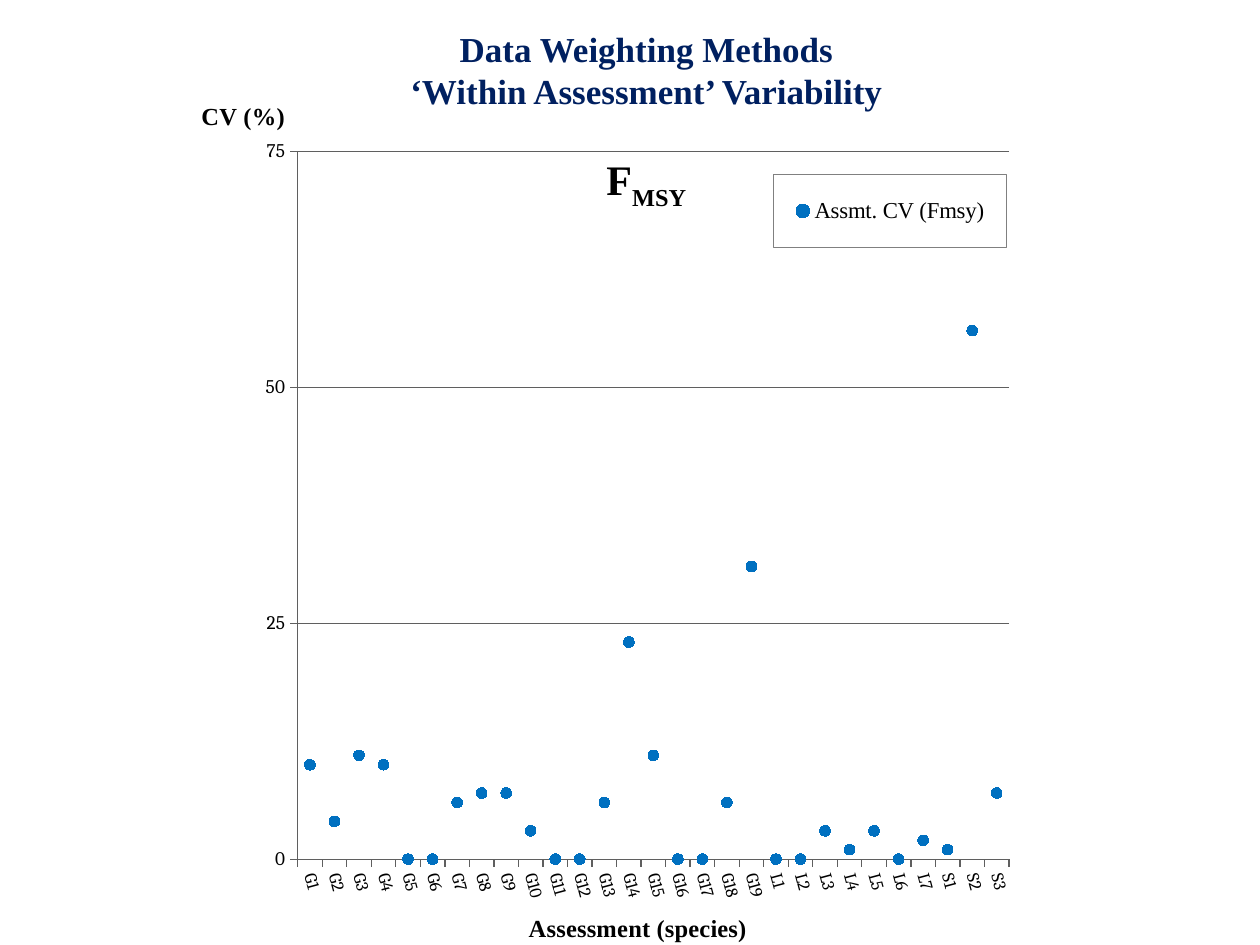
from lxml import etree
from pptx import Presentation
from pptx import util as u
from pptx.chart.data import CategoryChartData
from pptx.dml.color import RGBColor
from pptx.enum import chart as ch, text
from pptx.oxml import parse_xml
from pptx.oxml.ns import nsdecls, qn

SPECIES = [f"{group}{n}" for group, count in (("G", 19), ("L", 7), ("S", 3))
           for n in range(1, count + 1)]
CV = [10, 4, 11, 10, 0, 0, 6, 7, 7, 3, 0, 0, 6, 23, 11, 0, 0, 6, 31,
      0, 0, 3, 1, 3, 0, 2, 1, 56, 7]


def color(hex_value):
    return RGBColor.from_string(hex_value)


def set_layout(element, x, y, w=None, h=None, inner=False):
    """Place a chart part by shares of the chart's size."""
    for old in element.findall(qn("c:layout")):
        element.remove(old)
    layout = parse_xml(f"<c:layout {nsdecls('c')}><c:manualLayout/></c:layout>")
    values = {"layoutTarget": "inner" if inner else None,
              "xMode": "edge", "yMode": "edge", "x": x, "y": y, "w": w, "h": h}
    for tag, value in values.items():
        if value is not None:
            etree.SubElement(layout[0], qn(f"c:{tag}")).set("val", str(value))
    overlay = element.find(qn("c:overlay"))
    if overlay is None:
        element.insert(0, layout)
    else:
        overlay.addprevious(layout)


def shape_format(line=None):
    outline = (f'<a:ln w="9525"><a:solidFill><a:srgbClr val="{line}"/></a:solidFill></a:ln>'
               if line else "<a:ln><a:noFill/></a:ln>")
    return parse_xml(f"<c:spPr {nsdecls('c', 'a')}><a:noFill/>{outline}</c:spPr>")


class Deck:
    SERIF, LABELS = "Times New Roman", "Cambria"
    NAVY, BLACK, BLUE, GRAY = "002060", "000000", "0070C0", "5F5F5F"

    def __init__(self):
        self.prs = Presentation()
        self.prs.slide_width, self.prs.slide_height = u.Inches(10), u.Inches(7.5)
        self.slide = self.prs.slides.add_slide(self.prs.slide_layouts[5])

    def box(self, x, y, w, h):
        width, height = self.prs.slide_width, self.prs.slide_height
        return [int(v) for v in (x * width, y * height, w * width, h * height)]

    def style(self, font, size, hex_value, bold=False, name=SERIF):
        for key, value in {"name": name, "size": u.Pt(size), "bold": bold}.items():
            setattr(font, key, value)
        font.color.rgb = color(hex_value)

    def title(self, lines, symbol, subscript, *area):
        heading = self.slide.shapes.title
        for key, value in zip(("left", "top", "width", "height"), self.box(*area)):
            setattr(heading, key, value)
        frame = heading.text_frame
        frame.auto_size = text.MSO_AUTO_SIZE.NONE
        frame.vertical_anchor = text.MSO_ANCHOR.MIDDLE
        frame.text = "\n".join([*lines, symbol])
        for paragraph in frame.paragraphs:
            paragraph.alignment = text.PP_ALIGN.CENTER
            paragraph.space_before = u.Pt(0)
            self.style(paragraph.runs[0].font, 20, self.NAVY, True)
        measure = frame.paragraphs[-1]
        measure.space_before = u.Pt(24)
        sub = measure.add_run()
        sub.text = subscript
        for run in measure.runs:
            self.style(run.font, 24, self.BLACK, True)
        sub.font._element.set("baseline", "-25000")

    def axis(self, axis, caption, x, y, size):
        axis.major_tick_mark = ch.XL_TICK_MARK.OUTSIDE
        axis.minor_tick_mark = ch.XL_TICK_MARK.NONE
        axis.format.line.color.rgb = color(self.GRAY)
        axis.format.line.width = u.Pt(0.75)
        self.style(axis.tick_labels.font, size, self.BLACK, name=self.LABELS)
        frame = axis.axis_title.text_frame
        frame.text = caption
        self.style(frame.paragraphs[0].runs[0].font, 14, self.BLACK, True)
        frame._txBody.bodyPr.set("rot", "0")
        set_layout(axis.axis_title._element, x, y)

    def dot_chart(self, name, categories, values, *area):
        data = CategoryChartData(number_format="0")
        data.categories = categories
        data.add_series(name, values)
        chart = self.slide.shapes.add_chart(
            ch.XL_CHART_TYPE.LINE_MARKERS, *self.box(*area), data).chart
        chart.has_title = False
        self.style(chart.font, 10, self.BLACK, name=self.LABELS)

        # Clear backgrounds keep the heading visible
        space = chart._chartSpace
        space.find(qn("c:chart")).addnext(shape_format())
        plot_area = space.find(".//" + qn("c:plotArea"))
        plot_area.append(shape_format())
        set_layout(plot_area, 0.146, 0.105, 0.741, 0.794, inner=True)

        # Dots without a joining line
        dots = chart.plots[0].series[0]
        dots.smooth = False
        dots.format.line.fill.background()
        dots.marker.style, dots.marker.size = ch.XL_MARKER_STYLE.CIRCLE, 6
        for part in (dots.marker.format.fill, dots.marker.format.line.fill):
            part.solid()
            part.fore_color.rgb = color(self.BLUE)
        chart.plots[0].vary_by_categories = False

        # Axes
        species, cv = chart.category_axis, chart.value_axis
        self.axis(species, "Assessment (species)", 0.382, 0.953, 10)
        self.axis(cv, "CV (%)", 0.041, 0.043, 11)
        for key, value in {"minimum_scale": 0, "maximum_scale": 75, "major_unit": 25,
                           "has_major_gridlines": True}.items():
            setattr(cv, key, value)
        cv.major_gridlines.format.line.color.rgb = color(self.GRAY)
        cv.major_gridlines.format.line.width = u.Pt(0.75)
        cv.tick_labels.number_format = "0"
        cv.tick_labels.number_format_is_linked = False
        labels = species._element.find(qn("c:txPr"))
        labels.find(qn("a:bodyPr")).set("rot", "4500000")
        species._element.find(qn("c:noMultiLvlLbl")).addprevious(
            parse_xml(f'<c:tickLblSkip {nsdecls("c")} val="1"/>'))

        # Legend
        chart.has_legend = True
        legend = chart.legend
        legend.position = ch.XL_LEGEND_POSITION.RIGHT
        legend.include_in_layout = False
        self.style(legend.font, 13, self.BLACK)
        set_layout(legend._element, 0.642, 0.131, 0.242, 0.082)
        legend._element.find(qn("c:overlay")).addnext(shape_format("808080"))


def main():
    deck = Deck()
    deck.title(["Data Weighting Methods", "‘Within Assessment’ Variability"],
               "F", "MSY", 0.242, 0.033, 0.542, 0.187)
    deck.dot_chart("Assmt. CV (Fmsy)", SPECIES, CV, 0.125, 0.061, 0.762, 0.944)
    deck.prs.save("out.pptx")


if __name__ == "__main__":
    main()
